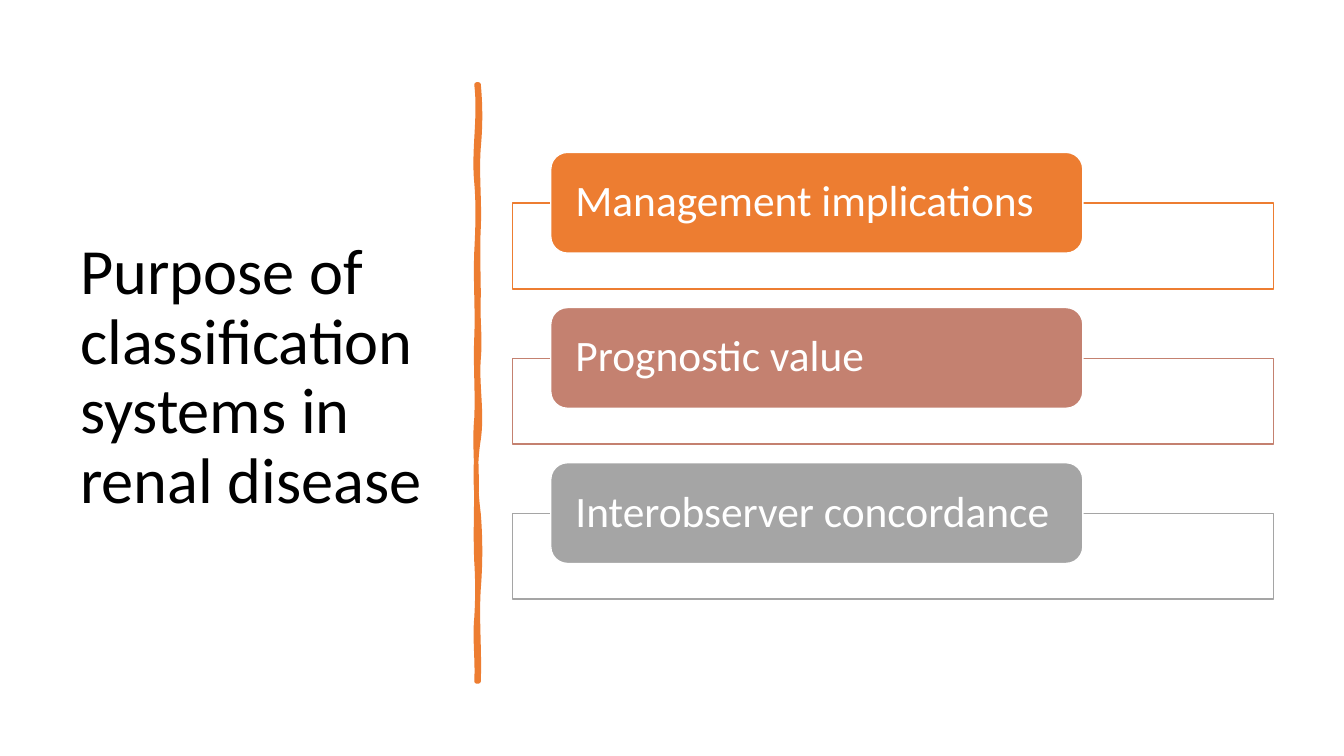
from dataclasses import dataclass

from pptx import Presentation
from pptx.dml.color import RGBColor
from pptx.enum.shapes import MSO_SHAPE as Preset
from pptx.enum.text import MSO_ANCHOR as Anchor, PP_ALIGN as Align
from pptx.oxml.ns import qn
from pptx.oxml.xmlchemy import OxmlElement
from pptx.shapes.autoshape import Shape
from pptx.slide import Slide
from pptx.util import Cm, Pt


@dataclass(frozen=True)
class Theme:
    font: str = "Calibri"
    title_size: float = 46
    label_size: float = 31
    outline: float = 1
    divider_outline: float = 3.25
    frame_opacity: float = 0.9
    black: str = "000000"
    white: str = "FFFFFF"
    orange: str = "ED7D31"
    rose: str = "C48170"
    grey: str = "A5A5A5"


@dataclass(frozen=True)
class Purpose:
    label: str
    color: str


@dataclass(frozen=True)
class Bend:
    """One curve of the divider's edge: sideways lean of both handles, then its end height, in cm."""
    first_lean: float
    second_lean: float
    end: float


THEME = Theme()
PURPOSES = (
    Purpose("Management implications", THEME.orange),
    Purpose("Prognostic value", THEME.rose),
    Purpose("Interobserver concordance", THEME.grey),
)
PURPOSE_PITCH = 3.91

DIVIDER_TOP = 2.13
DIVIDER_BOTTOM = 17.17
DIVIDER_LEFT = 12.01
DIVIDER_RIGHT = 12.06
RIGHT_EDGE = (
    Bend(0.05, 0.05, 3.71), Bend(-0.05, 0.03, 5.74),
    Bend(-0.03, 0, 7.47), Bend(-0.03, 0.05, 9.04),
    Bend(-0.05, 0.1, 11.07), Bend(-0.1, -0.08, 12.95),
    Bend(0.05, 0.05, 14.83), Bend(-0.05, 0.03, DIVIDER_BOTTOM),
)
LEFT_EDGE = (
    Bend(0.03, -0.05, 15.57), Bend(0.03, 0.03, 14.15),
    Bend(-0.03, 0, 12.12), Bend(0, -0.05, 10.54),
    Bend(0.03, -0.03, 8.51), Bend(0.03, -0.03, 6.35),
    Bend(0.03, 0.05, 4.6), Bend(-0.08, 0.1, DIVIDER_TOP),
)


def paint(shape: Shape, fill: str, line: str, width: float) -> None:
    shape.shadow.inherit = False
    shape.fill.solid()
    shape.fill.fore_color.rgb = RGBColor.from_string(fill)
    shape.line.color.rgb = RGBColor.from_string(line)
    shape.line.width = Pt(width)


def set_opacity(shape: Shape, opacity: float) -> None:
    color = shape.element.spPr.find(f"{qn('a:solidFill')}/{qn('a:srgbClr')}")
    alpha = OxmlElement("a:alpha")
    alpha.set("val", str(round(opacity * 100000)))
    color.append(alpha)


def write(shape: Shape, text: str, size: float, color: str) -> None:
    frame = shape.text_frame
    frame.word_wrap = True
    frame.vertical_anchor = Anchor.MIDDLE
    frame.text = text
    para = frame.paragraphs[0]
    para.alignment = Align.LEFT
    para.line_spacing = 0.9
    font = para.runs[0].font
    font.name = THEME.font
    font.size = Pt(size)
    font.color.rgb = RGBColor.from_string(color)


def bend_edge(shape: Shape, lines: list, x: float, start: float,
              bends: tuple[Bend, ...]) -> None:
    """Turn the straight segments of one edge into cubic curves, with handles at thirds."""
    for line, bend in zip(lines, bends):
        third = (bend.end - start) / 3
        handles = ((x + bend.first_lean, start + third),
                   (x + bend.second_lean, start + 2 * third))
        curve = OxmlElement("a:cubicBezTo")
        for handle_x, handle_y in handles:
            point = OxmlElement("a:pt")
            point.set("x", str(Cm(handle_x) - shape.left))
            point.set("y", str(Cm(handle_y) - shape.top))
            curve.append(point)
        curve.append(line[0])
        line.getparent().replace(line, curve)
        start = bend.end


def add_title(page: Slide) -> None:
    box = page.shapes.add_textbox(Cm(1.77), Cm(1.77), Cm(9.5), Cm(15.52))
    write(box, "Purpose of classification systems in renal disease",
          THEME.title_size, THEME.black)


def add_divider(page: Slide) -> None:
    right = [(Cm(DIVIDER_RIGHT), Cm(bend.end)) for bend in RIGHT_EDGE]
    left = [(Cm(DIVIDER_LEFT), Cm(bend.end)) for bend in LEFT_EDGE]
    builder = page.shapes.build_freeform(Cm(DIVIDER_RIGHT), Cm(DIVIDER_TOP))
    corner = (Cm(DIVIDER_LEFT), Cm(DIVIDER_BOTTOM))
    builder.add_line_segments([*right, corner, *left], close=True)
    divider = builder.convert_to_shape()
    paint(divider, THEME.orange, THEME.orange, THEME.divider_outline)
    lines = list(divider.element.iter(qn("a:lnTo")))
    bend_edge(divider, lines[:len(right)], DIVIDER_RIGHT, DIVIDER_TOP, RIGHT_EDGE)
    bend_edge(divider, lines[len(right) + 1:], DIVIDER_LEFT, DIVIDER_BOTTOM, LEFT_EDGE)


def add_purpose(page: Slide, purpose: Purpose, offset: float) -> None:
    frame = page.shapes.add_shape(
        Preset.RECTANGLE, Cm(12.91), Cm(5.12 + offset), Cm(19.18), Cm(2.16))
    paint(frame, THEME.white, purpose.color, THEME.outline)
    set_opacity(frame, THEME.frame_opacity)
    pill = page.shapes.add_shape(
        Preset.ROUNDED_RECTANGLE, Cm(13.88), Cm(3.84 + offset), Cm(13.41), Cm(2.54))
    paint(pill, purpose.color, THEME.white, THEME.outline)
    inset = pill.text_frame
    inset.margin_left = inset.margin_right = Cm(0.5)
    inset.margin_top = inset.margin_bottom = 0
    write(pill, purpose.label, THEME.label_size, THEME.white)


def main() -> None:
    deck = Presentation()
    deck.slide_width, deck.slide_height = Cm(33.87), Cm(19.05)
    page = deck.slides.add_slide(deck.slide_layouts[6])
    add_title(page)
    add_divider(page)
    for row, purpose in enumerate(PURPOSES):
        add_purpose(page, purpose, row * PURPOSE_PITCH)
    deck.save("out.pptx")


if __name__ == "__main__":
    main()
